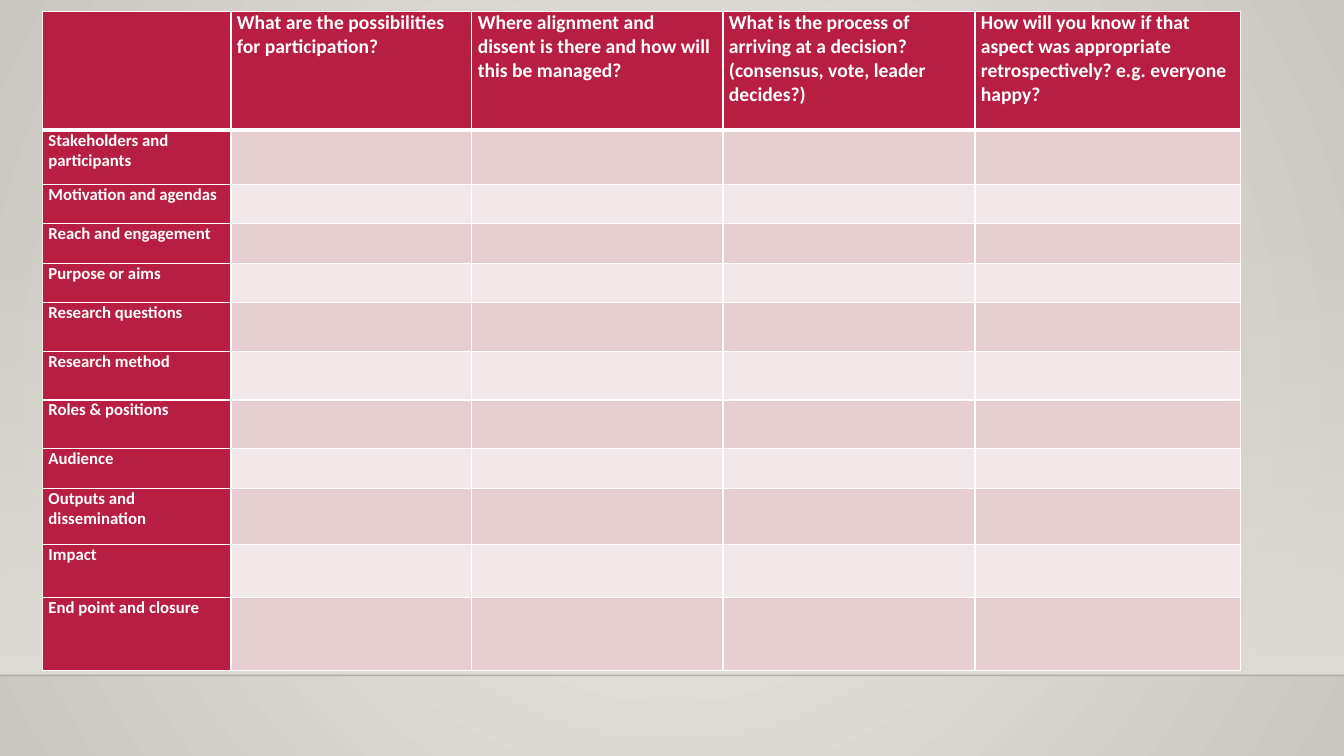
"""Build a planning grid for participatory research decisions."""
from dataclasses import dataclass

from lxml import etree
from pptx import Presentation
from pptx.dml.color import RGBColor
from pptx.enum.shapes import MSO_CONNECTOR, MSO_SHAPE
from pptx.oxml import parse_xml
from pptx.oxml.ns import nsdecls, qn
from pptx.util import Cm, Pt

RECTANGLE = MSO_SHAPE.RECTANGLE
STRAIGHT = MSO_CONNECTOR.STRAIGHT


@dataclass(frozen=True)
class Theme:
    font: str = "Calibri"
    header_size: int = 14
    label_size: int = 12
    red: str = "B71E42"
    dark_band: str = "E6CDCF"
    light_band: str = "F3E8E9"
    white: str = "FFFFFF"
    wall: str = "DFDBD5"
    glow: str = "ECEAE7"
    edge: str = "CAC7C1"
    floor_line: str = "000001"


def paint_gradient(properties, stops, direction):
    marks = "".join(
        f'<a:gs pos="{position * 1000}"><a:srgbClr val="{color}">'
        f'<a:alpha val="{opacity * 1000}"/></a:srgbClr></a:gs>'
        for position, color, opacity in stops
    )
    gradient = parse_xml(
        f'<a:gradFill {nsdecls("a")} rotWithShape="1">'
        f"<a:gsLst>{marks}</a:gsLst>{direction}</a:gradFill>"
    )
    properties.replace(properties.find(qn("a:solidFill")), gradient)


def add_border(cell, side, width):
    properties = cell._tc.get_or_add_tcPr()
    properties.append(parse_xml(
        f'<a:ln{side} {nsdecls("a")} w="{Pt(width)}"><a:solidFill>'
        f'<a:srgbClr val="{theme.white}"/></a:solidFill></a:ln{side}>'
    ))


theme = Theme()
questions = [
    "",
    "What are the possibilities for participation?",
    "Where alignment and dissent is there and how will this be managed?",
    "What is the process of arriving at a decision? (consensus, vote, leader decides?)",
    "How will you know if that aspect was appropriate retrospectively? e.g. everyone happy?",
]
aspects = [
    ("Stakeholders and participants", 1.37),
    ("Motivation and agendas", 0.99),
    ("Reach and engagement", 0.99),
    ("Purpose or aims", 0.99),
    ("Research questions", 1.23),
    ("Research method", 1.23),
    ("Roles & positions", 1.23),
    ("Audience", 0.99),
    ("Outputs and dissemination", 1.42),
    ("Impact", 1.33),
    ("End point and closure", 1.84),
]
header_height = 3
column_widths = [4.75, 6.07, 6.33, 6.35, 6.7]

deck = Presentation()
deck.slide_width = Cm(33.87)
deck.slide_height = Cm(19.05)
page = deck.slides.add_slide(deck.slide_layouts[6])

page.background.fill.solid()
paint_gradient(
    page.element.find(".//" + qn("p:bgPr")),
    [(0, theme.glow, 100), (100, theme.edge, 100)],
    '<a:path path="circle"><a:fillToRect l="50000" t="50000" r="50000" b="50000"/></a:path>',
)

floor_top = Cm(17.02)
wall = page.shapes.add_shape(RECTANGLE, 0, Cm(5.61), deck.slide_width, floor_top - Cm(5.61))
wall.shadow.inherit = False
wall.line.fill.background()
wall.fill.solid()
paint_gradient(
    wall.element.spPr,
    [(0, theme.wall, 0), (100, theme.wall, 100)],
    '<a:lin ang="5400000" scaled="0"/>',
)

floor_edge = page.shapes.add_connector(STRAIGHT, 0, floor_top, deck.slide_width, floor_top)
floor_edge.line.width = Pt(1)
floor_edge.line.color.rgb = RGBColor.from_string(theme.floor_line)
edge_properties = floor_edge.element.spPr
edge_color = edge_properties.find(".//" + qn("a:srgbClr"))
etree.SubElement(edge_color, qn("a:alpha"), val="20000")
etree.SubElement(edge_properties, qn("a:effectLst"))

row_heights = [header_height] + [height for _, height in aspects]
grid = page.shapes.add_table(
    len(row_heights), len(column_widths), Cm(1.07), Cm(0.28),
    Cm(sum(column_widths)), Cm(sum(row_heights)),
).table
grid.first_col = True
for column, width in zip(grid.columns, column_widths):
    column.width = Cm(width)
for row, height in zip(grid.rows, row_heights):
    row.height = Cm(height)

for column_index, question in enumerate(questions):
    grid.cell(0, column_index).text = question
for row_index, (aspect, _) in enumerate(aspects, start=1):
    grid.cell(row_index, 0).text = aspect

for row_index, row in enumerate(grid.rows):
    is_header = row_index == 0
    for column_index, cell in enumerate(row.cells):
        cell.margin_left = cell.margin_right = Cm(0.15)
        cell.margin_top = cell.margin_bottom = 0
        add_border(cell, "L", 1)
        add_border(cell, "R", 1)
        add_border(cell, "T", 3 if row_index == 1 else 1)
        add_border(cell, "B", 3 if is_header else 1)

        band = theme.dark_band if row_index % 2 else theme.light_band
        color = theme.red if is_header or column_index == 0 else band
        cell.fill.solid()
        cell.fill.fore_color.rgb = RGBColor.from_string(color)

        font = cell.text_frame.paragraphs[0].font
        font.size = Pt(theme.header_size if is_header else theme.label_size)
        for span in cell.text_frame.paragraphs[0].runs:
            span.font.name = theme.font
            span.font.size = font.size
            span.font.bold = True
            span.font.color.rgb = RGBColor.from_string(theme.white)

deck.save("out.pptx")
